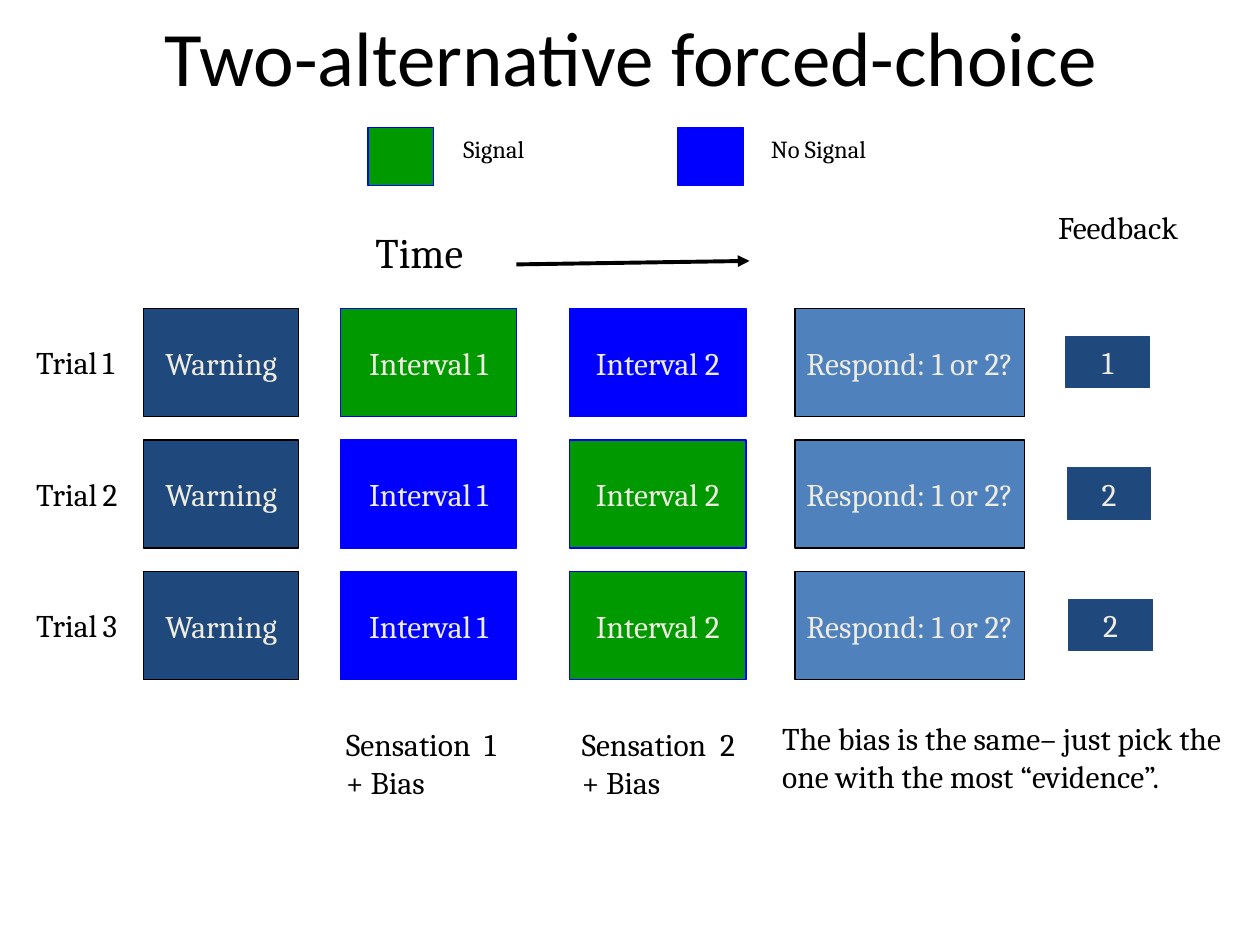
from lxml.etree import SubElement
from pptx import Presentation
from pptx.dml.color import RGBColor
from pptx.enum.shapes import MSO_CONNECTOR as Link, MSO_SHAPE as Preset
from pptx.enum.text import MSO_ANCHOR as Anchor, PP_ALIGN as Align
from pptx.oxml.ns import qn
from pptx.util import Cm, Pt

BLACK = RGBColor(0x00, 0x00, 0x00)
CREAM = RGBColor(0xEE, 0xEC, 0xE1)
NAVY = RGBColor(0x1F, 0x49, 0x7D)
STEEL = RGBColor(0x4F, 0x81, 0xBD)
GREEN = RGBColor(0x00, 0x99, 0x00)
BLUE = RGBColor(0x00, 0x00, 0xFF)


class Board:
    """Holds the text style and the slide being drawn, with lengths in centimetres."""

    def __init__(self, slide, font="Cambria", size=18):
        self.slide = slide
        self.font = font
        self.size = size

    def fill_text(self, frame, lines, color, align, anchor, wrap, font=None):
        frame.word_wrap = wrap
        frame.vertical_anchor = anchor
        for index, line in enumerate(lines):
            paragraph = frame.add_paragraph() if index else frame.paragraphs[0]
            paragraph.alignment = align
            for words, size in line:
                run = paragraph.add_run()
                run.text = words
                run.font.name = font or self.font
                run.font.size = Pt(size or self.size)
                run.font.color.rgb = color

    def text(self, area, *lines, align=Align.LEFT, anchor=Anchor.TOP, wrap=False, font=None):
        box = self.slide.shapes.add_textbox(*map(Cm, area))
        self.fill_text(box.text_frame, lines, BLACK, align, anchor, wrap, font)

    def block(self, area, fill, outline, *lines, wrap=False):
        rect = self.slide.shapes.add_shape(Preset.RECTANGLE, *map(Cm, area))
        rect.shadow.inherit = False
        rect.fill.solid()
        rect.fill.fore_color.rgb = fill
        rect.line.color.rgb = outline
        rect.line.width = Pt(0.75)
        self.fill_text(rect.text_frame, lines, CREAM, Align.CENTER, Anchor.MIDDLE, wrap)

    def arrow(self, *ends):
        connector = self.slide.shapes.add_connector(Link.STRAIGHT, *map(Cm, ends))
        connector.line.color.rgb = BLACK
        connector.line.width = Pt(2.25)
        properties = connector._element.spPr
        SubElement(properties.find(qn("a:ln")), qn("a:tailEnd"), type="triangle")
        SubElement(properties, qn("a:effectLst"))


def plain(words, size=None):
    return [(words, size)]


def numbered(word, number):
    return [(word, None), (" ", 14), (str(number), None)]


def main():
    deck = Presentation()
    deck.slide_width, deck.slide_height = Cm(25.4), Cm(19.05)
    board = Board(deck.slides.add_slide(deck.slide_layouts[6]))

    board.text((1.93, 0, 21.59, 2.26), plain("Two-alternative forced-choice", 44),
               align=Align.CENTER, anchor=Anchor.MIDDLE, wrap=True, font="Calibri")

    for left, label_left, label_width, fill, label in (
            (7.42, 9.09, 1.78, GREEN, "Signal"),
            (13.67, 15.29, 2.49, BLUE, "No Signal")):
        board.block((left, 2.57, 1.32, 1.17), fill, BLUE)
        board.text((label_left, 2.57, label_width, 0.84), plain(label, 14))

    board.text((7.32, 4.45, 2.29, 1.27), plain("Time", 24))
    board.arrow(10.41, 5.33, 15.11, 5.26)
    board.text((21.08, 4.06, 2.95, 1.02), plain("Feedback"))

    for index, signal_interval in enumerate((1, 2, 2)):
        top = 6.22 + 2.65 * index
        first, second = (GREEN, BLUE) if signal_interval == 1 else (BLUE, GREEN)
        for left, width, fill, outline, line in (
                (2.9, 3.12, NAVY, BLACK, plain("Warning")),
                (6.86, 3.56, first, BLUE, numbered("Interval", 1)),
                (11.48, 3.56, second, BLUE, plain("Interval 2")),
                (16.03, 4.62, STEEL, BLACK, plain("Respond: 1 or 2?"))):
            board.block((left, top, width, 2.18), fill, outline, line)
        board.text((0.48, top + 0.58, 2.18, 1.02), numbered("Trial", index + 1))
        board.block((21.49 + 0.03 * index, top + 0.56, 1.68, 1.04), NAVY, NAVY,
                    plain(str(signal_interval)), wrap=True)

    for number, left in enumerate((6.73, 11.48), start=1):
        board.text((left, 14.49, 3.61, 1.78), plain(f"Sensation  {number}"), plain("+ Bias"))
    board.text((15.52, 14.38, 9.88, 1.8),
               plain("The bias is the same– just pick the one with the most “evidence”."), wrap=True)

    deck.save("out.pptx")


if __name__ == "__main__":
    main()
